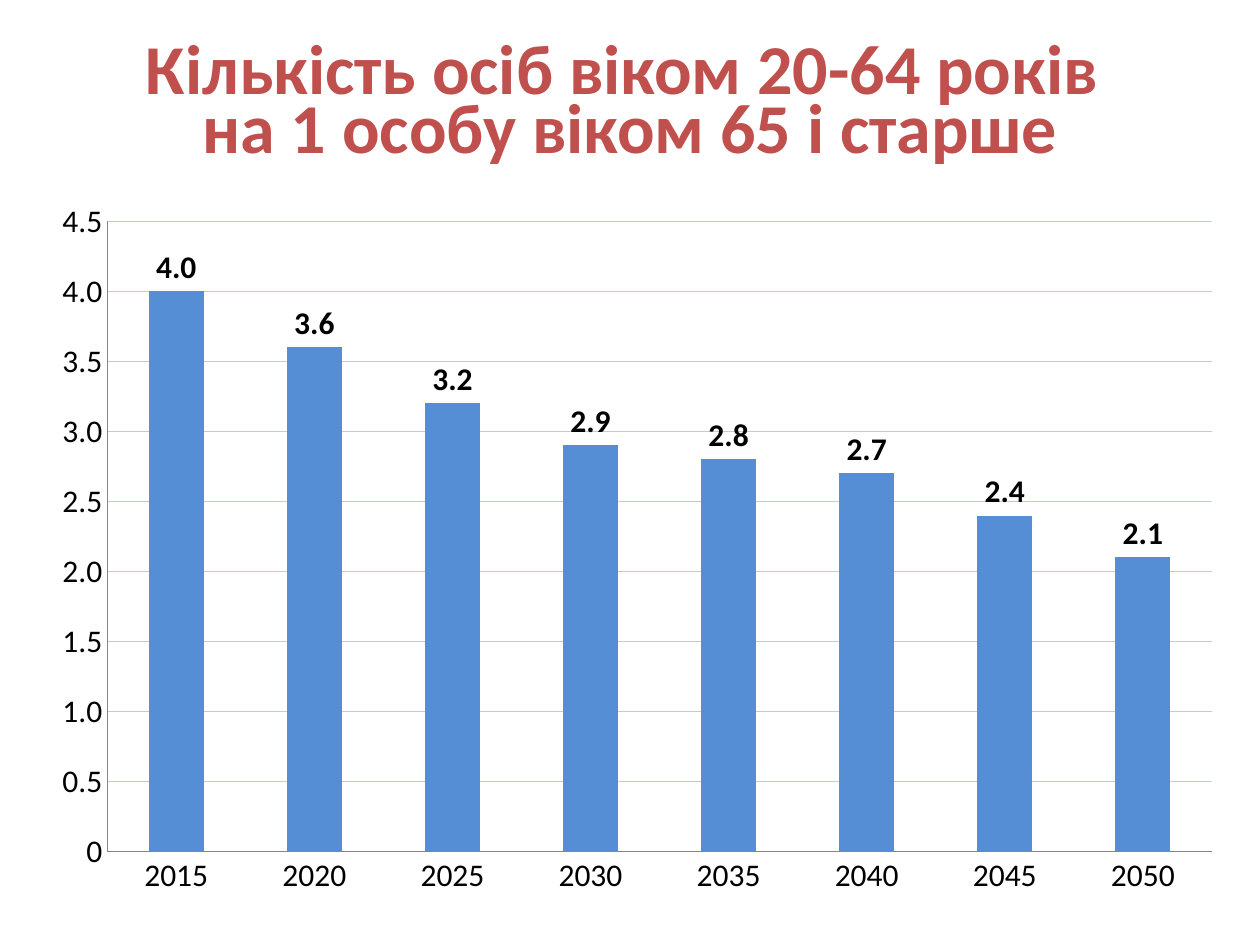
from dataclasses import dataclass

from lxml import etree
from pptx import Presentation
from pptx.chart.data import CategoryChartData
from pptx.dml.color import RGBColor
from pptx.enum.chart import XL_CHART_TYPE, XL_LABEL_POSITION, XL_TICK_MARK
from pptx.enum.text import MSO_ANCHOR, PP_ALIGN
from pptx.util import Inches, Pt

COLUMNS = XL_CHART_TYPE.COLUMN_CLUSTERED
OUTSIDE_END = XL_LABEL_POSITION.OUTSIDE_END
NO_TICK = XL_TICK_MARK.NONE
MIDDLE = MSO_ANCHOR.MIDDLE
CENTER = PP_ALIGN.CENTER

FONT = "Calibri"
RED = RGBColor(0xC0, 0x50, 0x4D)
BLUE = RGBColor(0x55, 0x8E, 0xD5)
PALE_BLUE = RGBColor(0xB9, 0xCD, 0xE5)
GRAY = RGBColor(0x86, 0x86, 0x86)
BLACK = RGBColor(0, 0, 0)
NUMBER_FORMAT = "##0.0;\\-##0.0;0"
CHART_NS = "http://schemas.openxmlformats.org/drawingml/2006/chart"


@dataclass(frozen=True)
class Area:
    left: float
    top: float
    width: float
    height: float

    def lengths(self) -> tuple:
        return tuple(map(Inches, (self.left, self.top, self.width, self.height)))


TITLE_AREA = Area(0.5, 0.3, 9, 1.09)
CHART_AREA = Area(0.28, 1.47, 9.53, 5.75)
PLOT_SHARE = {"x": 0.06, "y": 0.05, "w": 0.92, "h": 0.87}

YEARS = [str(year) for year in range(2015, 2051, 5)]
RATIOS = [4.0, 3.6, 3.2, 2.9, 2.8, 2.7, 2.4, 2.1]


def format_font(font, *, size: float, color: RGBColor, bold: bool = False) -> None:
    font.name = FONT
    font.size = Pt(size)
    font.bold = bold
    font.color.rgb = color


def add_text(page, text: str, area: Area, *, size: float, color: RGBColor,
             bold: bool = False, line_spacing: float = 1.0) -> None:
    box = page.shapes.add_textbox(*area.lengths())
    frame = box.text_frame
    frame.word_wrap = True
    frame.vertical_anchor = MIDDLE
    para = frame.paragraphs[0]
    para.text = text
    para.alignment = CENTER
    para.line_spacing = line_spacing
    for span in para.runs:
        format_font(span.font, size=size, color=color, bold=bold)


def place_plot(chart, shares: dict) -> None:
    """Fix the inner plot area as shares of the chart's size."""
    plot_area = chart.plots[0]._element.getparent()
    for old_layout in plot_area.findall(f"{{{CHART_NS}}}layout"):
        plot_area.remove(old_layout)
    layout = etree.Element(f"{{{CHART_NS}}}layout")
    manual = etree.SubElement(layout, f"{{{CHART_NS}}}manualLayout")
    settings = {"layoutTarget": "inner", "xMode": "edge", "yMode": "edge", **shares}
    for name, value in settings.items():
        etree.SubElement(manual, f"{{{CHART_NS}}}{name}", val=str(value))
    plot_area.insert(0, layout)


def add_ratio_chart(page, area: Area) -> None:
    data = CategoryChartData(number_format="0.0")
    data.categories = YEARS
    data.add_series("Series 1", RATIOS)
    chart = page.shapes.add_chart(COLUMNS, *area.lengths(), data).chart
    chart.has_legend = False
    chart.has_title = False
    format_font(chart.font, size=18, color=BLACK)
    place_plot(chart, PLOT_SHARE)

    # Axes and gridlines
    for axis in (chart.category_axis, chart.value_axis):
        axis.major_tick_mark = NO_TICK
        axis.minor_tick_mark = NO_TICK
        axis.format.line.color.rgb = GRAY
        axis.format.line.width = Pt(0.75)
    values = chart.value_axis
    values.minimum_scale, values.maximum_scale, values.major_unit = 0, 4.5, 0.5
    values.tick_labels.number_format = NUMBER_FORMAT
    values.tick_labels.number_format_is_linked = False
    values.has_major_gridlines = True
    values.major_gridlines.format.line.color.rgb = PALE_BLUE
    values.major_gridlines.format.line.width = Pt(0.75)

    # Columns and their labels
    plot = chart.plots[0]
    plot.gap_width = 150
    plot.vary_by_categories = False
    fill = plot.series[0].format.fill
    fill.solid()
    fill.fore_color.rgb = BLUE
    labels = plot.series[0].data_labels
    labels.show_value = True
    labels.position = OUTSIDE_END
    labels.number_format = NUMBER_FORMAT
    labels.number_format_is_linked = False
    format_font(labels.font, size=18, color=BLACK, bold=True)


def main() -> None:
    deck = Presentation()
    deck.slide_width, deck.slide_height = Inches(10), Inches(7.5)
    page = deck.slides.add_slide(deck.slide_layouts[6])
    add_text(page, "Кількість осіб віком 20-64 років \vна 1 особу віком 65 і старше",
             TITLE_AREA, size=40, color=RED, bold=True, line_spacing=0.7)
    add_ratio_chart(page, CHART_AREA)
    deck.save("out.pptx")


if __name__ == "__main__":
    main()
